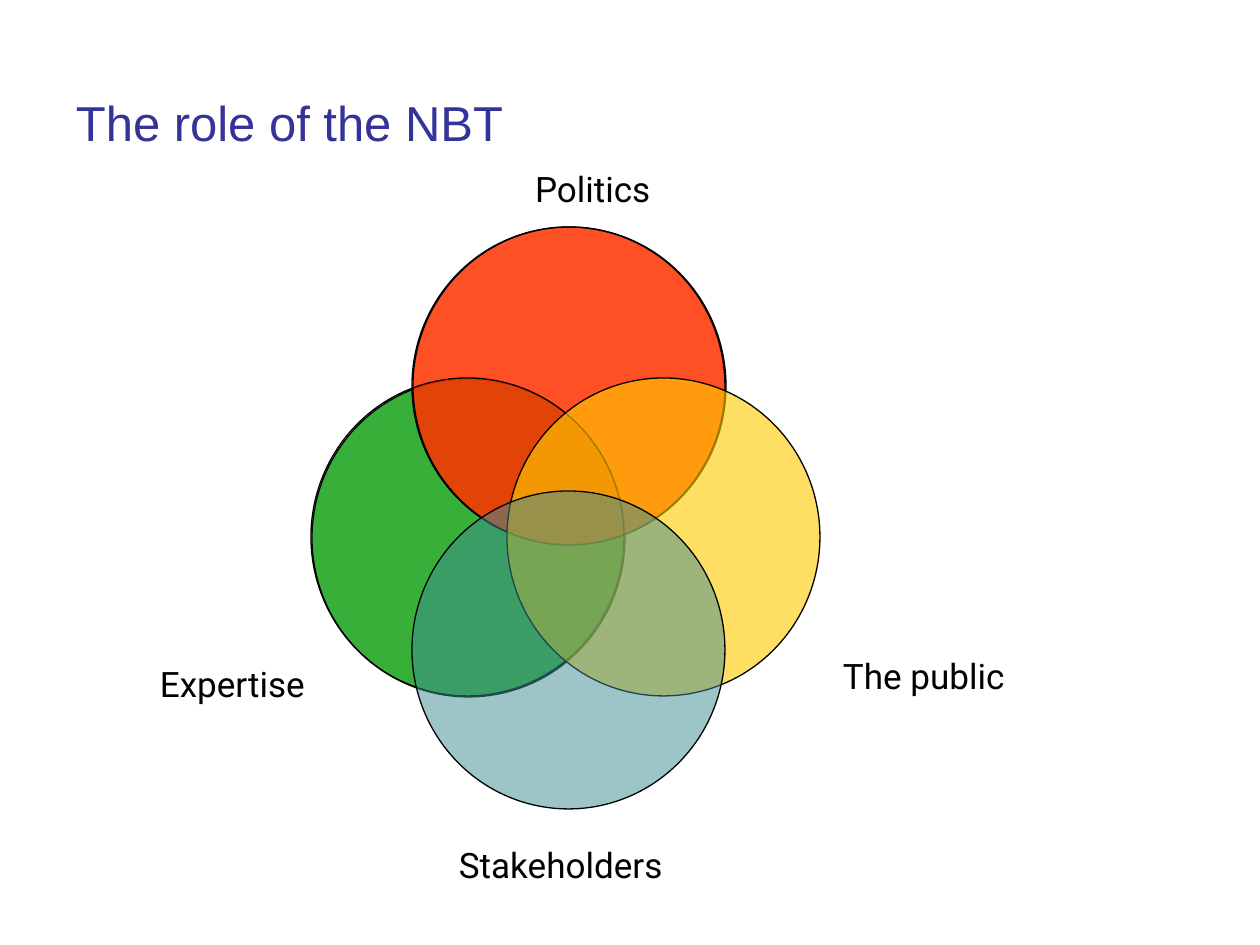
from pptx import Presentation
from pptx.dml.color import RGBColor
from pptx.enum.shapes import MSO_SHAPE
from pptx.enum.text import MSO_ANCHOR
from pptx.oxml.ns import qn
from pptx.util import Pt
from lxml import etree

PX_PER_INCH = 126
COLORS = {
    "title": "333399",
    "black": "000000",
    "expertise": "009900",
    "politics": "FF3300",
    "public": "FFCC00",
    "stakeholders": "3C8C93",
}
CIRCLE_W, CIRCLE_H = 313, 318
CIRCLES = [
    (312, 379, "expertise", 78),
    (413, 227, "politics", 86),
    (412, 227, None, None),
    (311, 378, None, None),
    (507, 378, "public", 61),
    (412, 491, "stakeholders", 50),
]
LABELS = [
    ("Expertise", 149, 658, 192),
    ("The public", 832, 650, 241),
    ("Politics", 524, 163, 173),
    ("Stakeholders", 448, 839, 241),
]
LABEL_H = 53


def px(n):
    return round(n * 914400 / PX_PER_INCH)


def rgb(name):
    return RGBColor.from_string(COLORS[name])


def add_text(s, text, box, size, font, color, inset):
    sp = s.shapes.add_textbox(*map(px, box))
    tf = sp.text_frame
    tf.word_wrap = True
    tf.vertical_anchor = MSO_ANCHOR.TOP
    tf.margin_left = tf.margin_right = px(inset[0])
    tf.margin_top = tf.margin_bottom = px(inset[1])
    tf.text = text
    r = tf.paragraphs[0].runs[0]
    r.font.size = Pt(size)
    r.font.name = font
    r.font.color.rgb = rgb(color)


def add_circle(s, left, top, color, opacity):
    sp = s.shapes.add_shape(
        MSO_SHAPE.OVAL, px(left), px(top), px(CIRCLE_W), px(CIRCLE_H))
    sp.shadow.inherit = False
    sp.line.color.rgb = rgb("black")
    sp.line.width = Pt(0.75)
    if color is None:
        sp.fill.background()
        return
    sp.fill.solid()
    sp.fill.fore_color.rgb = rgb(color)
    clr = sp.fill._xPr.find(qn("a:solidFill"))[0]
    etree.SubElement(clr, qn("a:alpha")).set("val", str(opacity * 1000))


def main():
    prs = Presentation()
    prs.slide_width, prs.slide_height = px(1260), px(945)
    s = prs.slides.add_slide(prs.slide_layouts[6])
    add_text(s, "The role of the NBT", (63, 86, 1134, 158),
             28, "Arial", "title", (13, 6))
    for circle in CIRCLES:
        add_circle(s, *circle)
    for text, left, top, width in LABELS:
        add_text(s, text, (left, top, width, LABEL_H),
                 20, "Roboto", "black", (11, 5))
    prs.save("out.pptx")


if __name__ == "__main__":
    main()
